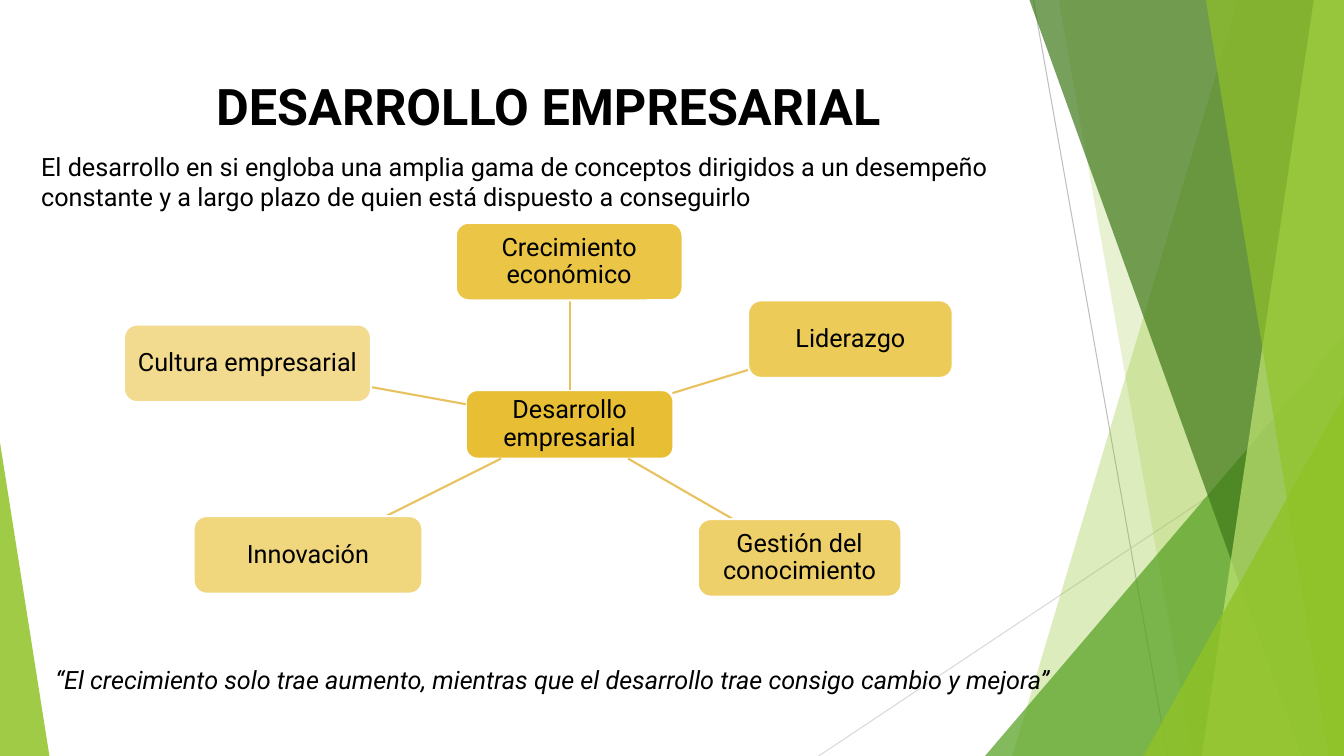
from dataclasses import dataclass

import pptx
import pptx.util
from lxml import etree
from pptx.dml.color import RGBColor
from pptx.enum.shapes import MSO_CONNECTOR, MSO_SHAPE
from pptx.enum.text import MSO_ANCHOR, MSO_AUTO_SIZE, PP_ALIGN
from pptx.oxml.ns import qn
from pptx.util import Inches

WIDTH, HEIGHT = 13.33, 7.5
FONT = "Roboto"
BLACK, WHITE = "000000", "FFFFFF"
GOLD, SPOKE = "E6B91E", "E9C260"
LIME, GREEN, FOREST, PALE = "90C226", "54A021", "3F7819", "C0E474"


@dataclass
class Rule:
    start: tuple[float, float]
    end: tuple[float, float]
    color: str


@dataclass
class Band:
    """A strip that runs from the left edge given to the slide's right edge."""
    top_x: float
    bottom_x: float
    color: str
    opacity: int


@dataclass
class Triangle:
    box: tuple[float, float, float, float]
    apex: float
    color: str
    opacity: int


@dataclass
class Node:
    label: str
    box: tuple[float, float, float, float]
    opacity: int
    spoke: tuple[tuple[float, float], tuple[float, float]] | None = None


RULES = [
    Rule((10.25, 0), (11.58, HEIGHT), "BFBFBF"),
    Rule((WIDTH, 4.03), (8.12, HEIGHT), "D9D9D9"),
]
FACETS = [
    Band(12.28, 10.04, LIME, 30),
    Band(10.5, 11.83, LIME, 20),
    Triangle((9.77, 3.33, 3.56, 4.17), 1, GREEN, 72),
    Band(10.21, 12.91, FOREST, 70),
    Band(13.03, 11.92, PALE, 70),
    Band(11.96, 13.18, LIME, 65),
    Triangle((11.34, 3.93, 1.99, 3.57), 1, LIME, 80),
    Triangle((0, 4.39, 0.49, 3.11), 0, LIME, 85),
]
NODES = [
    Node("Desarrollo empresarial", (4.62, 3.87, 2.06, 0.68), 90),
    Node("Crecimiento económico", (4.52, 2.21, 2.25, 0.77), 82,
         ((5.65, 3.87), (5.65, 2.98))),
    Node("Liderazgo", (7.42, 2.98, 2.03, 0.77), 74,
         ((6.67, 3.9), (7.42, 3.67))),
    Node("Gestión del conocimiento", (6.92, 5.15, 2.02, 0.77), 66,
         ((6.23, 4.55), (7.27, 5.15))),
    Node("Innovación", (1.92, 5.12, 2.27, 0.77), 58,
         ((4.97, 4.55), (3.83, 5.12))),
    Node("Cultura empresarial", (1.23, 3.22, 2.45, 0.77), 50,
         ((4.62, 4.01), (3.68, 3.84))),
]


def rgb(color: str) -> RGBColor:
    return RGBColor.from_string(color)


def fill_shape(shape, color: str, opacity: int) -> None:
    shape.shadow.inherit = False
    shape.fill.solid()
    shape.fill.fore_color.rgb = rgb(color)
    solid = shape.fill._xPr.find(qn("a:solidFill"))
    etree.SubElement(solid[0], qn("a:alpha"), val=str(opacity * 1000))


def draw_line(page, start, end, color: str, weight: float) -> None:
    line = page.shapes.add_connector(
        MSO_CONNECTOR.STRAIGHT, *map(Inches, (*start, *end)))
    line.line.color.rgb = rgb(color)
    line.line.width = pptx.util.Pt(weight)
    etree.SubElement(line._element.spPr, qn("a:effectLst"))


def draw_facet(page, facet: Band | Triangle) -> None:
    if isinstance(facet, Band):
        corners = [(WIDTH, 0), (WIDTH, HEIGHT), (facet.bottom_x, HEIGHT)]
        builder = page.shapes.build_freeform(Inches(facet.top_x), 0)
        builder.add_line_segments([(Inches(x), Inches(y)) for x, y in corners])
        shape = builder.convert_to_shape()
    else:
        shape = page.shapes.add_shape(
            MSO_SHAPE.ISOSCELES_TRIANGLE, *map(Inches, facet.box))
        shape.adjustments[0] = facet.apex
    fill_shape(shape, facet.color, facet.opacity)
    shape.line.fill.background()


def write(shape, text: str, size: float = 18, align=PP_ALIGN.CENTER,
          anchor=MSO_ANCHOR.TOP, bold: bool = False, italic: bool = False):
    frame = shape.text_frame
    frame.word_wrap = True
    frame.auto_size = MSO_AUTO_SIZE.NONE
    frame.vertical_anchor = anchor
    para = frame.paragraphs[0]
    para.alignment = align
    span = para.add_run()
    span.text = text
    span.font.name = FONT
    span.font.size = pptx.util.Pt(size)
    span.font.bold = bold
    span.font.italic = italic
    span.font.color.rgb = rgb(BLACK)
    return frame


def draw_node(page, node: Node) -> None:
    if node.spoke:
        draw_line(page, *node.spoke, SPOKE, 1.5)
    box = page.shapes.add_shape(
        MSO_SHAPE.ROUNDED_RECTANGLE, *map(Inches, node.box))
    fill_shape(box, GOLD, node.opacity)
    box.line.color.rgb = rgb(WHITE)
    box.line.width = pptx.util.Pt(1.5)
    frame = write(box, node.label, anchor=MSO_ANCHOR.MIDDLE)
    frame.margin_left = frame.margin_right = Inches(0.05)
    frame.margin_top = frame.margin_bottom = Inches(0.05)
    frame.paragraphs[0].line_spacing = 0.9


def main() -> None:
    deck = pptx.Presentation()
    deck.slide_width, deck.slide_height = Inches(WIDTH), Inches(HEIGHT)
    page = deck.slides.add_slide(deck.slide_layouts.get_by_name("Title Only"))

    # Background facets
    for rule in RULES:
        draw_line(page, rule.start, rule.end, rule.color, 0.75)
    for facet in FACETS:
        draw_facet(page, facet)

    # Title
    title = page.shapes.title
    title.left, title.top = Inches(0.74), Inches(0.69)
    title.width, title.height = Inches(9.4), Inches(0.96)
    write(title, "DESARROLLO EMPRESARIAL", size=36, bold=True)

    # Introduction and closing quote
    intro = page.shapes.add_textbox(*map(Inches, (0.31, 1.45, 10.35, 0.75)))
    write(intro, "El desarrollo en si engloba una amplia gama de conceptos "
          "dirigidos a un desempeño constante y a largo plazo de quien está "
          "dispuesto a conseguirlo", align=PP_ALIGN.LEFT)
    quote = page.shapes.add_textbox(*map(Inches, (0.31, 6.54, 10.35, 0.5)))
    write(quote, "“El crecimiento solo trae aumento, mientras que el "
          "desarrollo trae consigo cambio y mejora”", italic=True)

    # Radial diagram
    for node in NODES:
        draw_node(page, node)

    deck.save("out.pptx")


if __name__ == "__main__":
    main()
